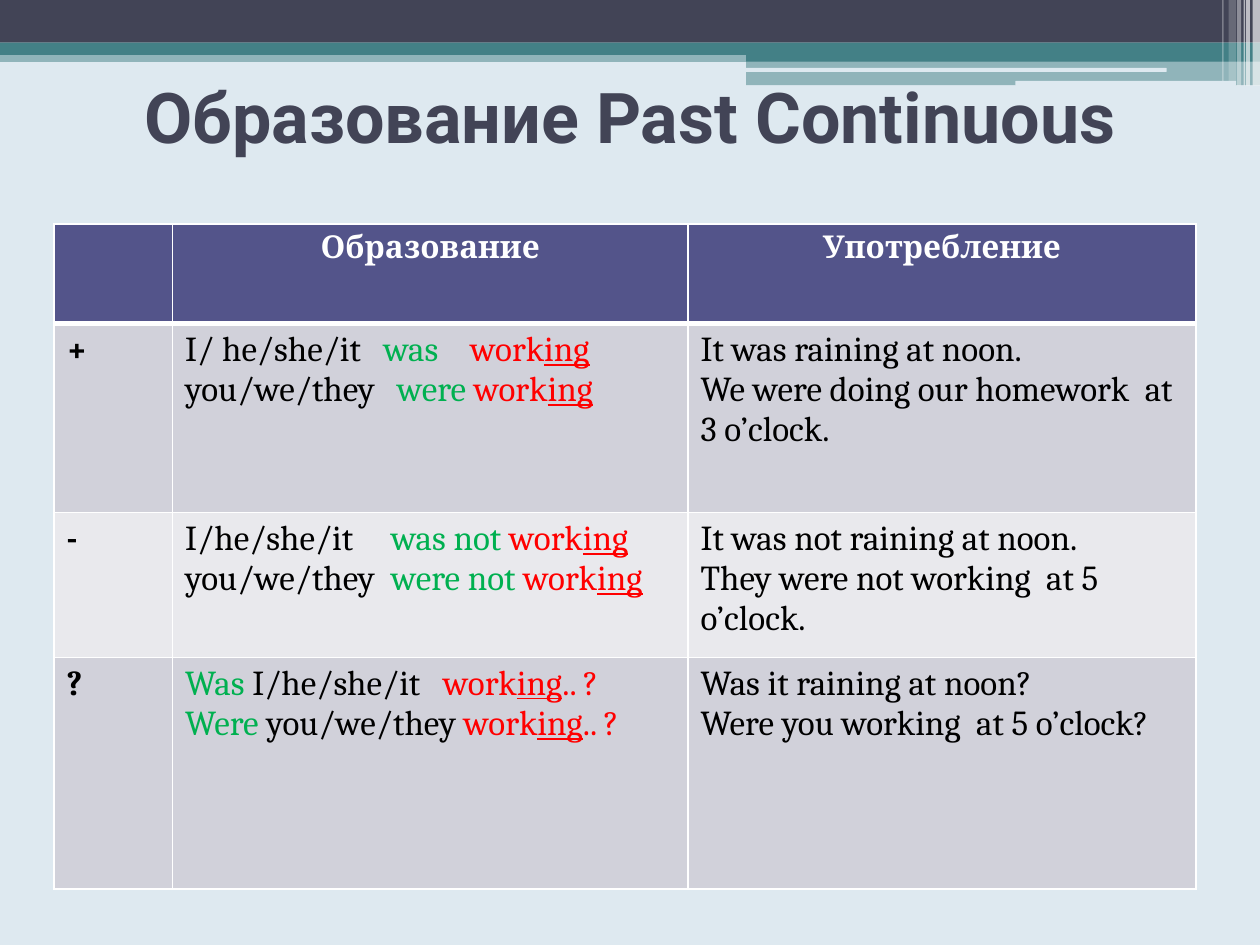
from lxml.etree import SubElement
from pptx import Presentation
from pptx.dml.color import RGBColor
from pptx.enum.shapes import MSO_SHAPE
from pptx.enum.text import MSO_ANCHOR, PP_ALIGN
from pptx.oxml import parse_xml
from pptx.oxml.ns import nsdecls, qn
from pptx.util import Cm, Pt

PALE = RGBColor(0xDE, 0xE9, 0xF0)
SLATE = RGBColor(0x42, 0x44, 0x56)
TEAL = RGBColor(0x43, 0x80, 0x86)
INDIGO = RGBColor(0x53, 0x54, 0x8A)
BAND_DARK = RGBColor(0xD1, 0xD1, 0xDA)
BAND_LIGHT = RGBColor(0xE9, 0xE9, 0xED)
WHITE = RGBColor(0xFF, 0xFF, 0xFF)
BLACK = RGBColor(0x00, 0x00, 0x00)
GREEN = RGBColor(0x00, 0xB0, 0x50)
RED = RGBColor(0xFF, 0x00, 0x00)


def add_text(paragraph, text, font="Cambria", size=20, color=BLACK, bold=False, underline=False):
    run = paragraph.add_run()
    run.text = text
    run.font.name = font
    run.font.size = Pt(size)
    run.font.color.rgb = color
    run.font.bold = bold
    run.font.underline = underline


presentation = Presentation()
presentation.slide_width = Cm(25.4)
presentation.slide_height = Cm(19.05)
slide = presentation.slides.add_slide(presentation.slide_layouts[6])
slide.background.fill.solid()
slide.background.fill.fore_color.rgb = PALE

RECT, ROUND = MSO_SHAPE.RECTANGLE, MSO_SHAPE.ROUNDED_RECTANGLE
bars = [
    (RECT, 0, 1.02, 25.4, 0.23, TEAL, 50),
    (RECT, 0, 0, 25.4, 0.86, SLATE, 100),
    (RECT, 0, 0.86, 25.4, 0.25, TEAL, 100),
    (RECT, 15.04, 0.99, 10.36, 0.25, TEAL, 100),
    (RECT, 15.04, 1.22, 10.36, 0.5, TEAL, 50),
    (ROUND, 15.01, 1.37, 8.51, 0.08, PALE, 100),
    (ROUND, 20.47, 1.63, 4.45, 0.1, PALE, 100),
    (RECT, 25.25, 0, 0.15, 1.73, WHITE, 65),
    (RECT, 25.12, 0, 0.08, 1.73, WHITE, 65),
    (RECT, 25.07, 0, 0.03, 1.73, WHITE, 60),
    (RECT, 24.94, 0, 0.08, 1.73, WHITE, 40),
    (RECT, 24.77, 0, 0.15, 1.63, WHITE, 20),
    (RECT, 24.64, 0, 0.03, 1.63, WHITE, 30),
]
for kind, left, top, width, height, color, opacity in bars:
    shape = slide.shapes.add_shape(kind, Cm(left), Cm(top), Cm(width), Cm(height))
    shape.shadow.inherit = False
    shape.line.fill.background()
    shape.fill.solid()
    shape.fill.fore_color.rgb = color
    if opacity < 100:
        fill_color = shape.element.spPr.find(".//" + qn("a:srgbClr"))
        SubElement(fill_color, qn("a:alpha"), val=str(opacity * 1000))

title = slide.shapes.add_textbox(Cm(1.27), Cm(0.53), Cm(22.86), Cm(3.61))
title.text_frame.word_wrap = True
title.text_frame.vertical_anchor = MSO_ANCHOR.MIDDLE
title_paragraph = title.text_frame.paragraphs[0]
title_paragraph.alignment = PP_ALIGN.CENTER
add_text(title_paragraph, "Образование Past Continuous", font="Roboto", size=40, color=SLATE, bold=True)

column_widths = [2.39, 10.39, 10.24]
row_heights = [2, 3.81, 2.92, 4.67]
table = slide.shapes.add_table(
    4, 3, Cm(1.09), Cm(4.52), Cm(sum(column_widths)), Cm(sum(row_heights))
).table
for column, width in zip(table.columns, column_widths):
    column.width = Cm(width)
for row, height in zip(table.rows, row_heights):
    row.height = Cm(height)

for row_index, fill_color in enumerate([INDIGO, BAND_DARK, BAND_LIGHT, BAND_DARK]):
    for cell in table.rows[row_index].cells:
        cell.fill.solid()
        cell.fill.fore_color.rgb = fill_color
        widths = {"L": 1, "R": 1, "T": 3 if row_index == 1 else 1, "B": 3 if row_index == 0 else 1}
        properties = cell._tc.get_or_add_tcPr()
        for position, (side, points) in enumerate(widths.items()):
            border = parse_xml(
                f'<a:ln{side} {nsdecls("a")} w="{Pt(points)}"><a:solidFill>'
                f'<a:srgbClr val="{WHITE}"/></a:solidFill></a:ln{side}>'
            )
            properties.insert(position, border)

for column_index, heading in enumerate(["Образование", "Употребление"], start=1):
    paragraph = table.cell(0, column_index).text_frame.paragraphs[0]
    paragraph.alignment = PP_ALIGN.CENTER
    add_text(paragraph, heading, size=18, color=WHITE, bold=True)

VERB = [("work", RED, False), ("ing", RED, True)]
QUESTION_VERB = VERB + [(".. ?", RED, False)]
content = [
    (
        "+",
        [
            ([4, 5.75], [("I/ he/she/it\t", BLACK, False), ("was\t", GREEN, False)] + VERB),
            ([4.27], [("you/we/they\t", BLACK, False), ("were ", GREEN, False)] + VERB),
        ],
        ["It was raining at noon.", "We were doing our homework  at 3 o’clock."],
    ),
    (
        "-",
        [
            ([4.15], [("I/he/she/it\t", BLACK, False), ("was not ", GREEN, False)] + VERB),
            ([4.15], [("you/we/they\t", BLACK, False), ("were not ", GREEN, False)] + VERB),
        ],
        ["It was not raining at noon.", "They were not working  at 5 o’clock."],
    ),
    (
        "?",
        [
            ([5.2], [("Was ", GREEN, False), ("I/he/she/it\t", BLACK, False)] + QUESTION_VERB),
            ([], [("Were ", GREEN, False), ("you/we/they ", BLACK, False)] + QUESTION_VERB),
        ],
        ["Was it raining at noon?", "Were you working  at 5 o’clock?"],
    ),
]
for row_index, (sign, formulas, examples) in enumerate(content, start=1):
    add_text(table.cell(row_index, 0).text_frame.paragraphs[0], sign, bold=True)
    formula_frame = table.cell(row_index, 1).text_frame
    example_frame = table.cell(row_index, 2).text_frame
    for frame in (formula_frame, example_frame):
        frame.add_paragraph()
    for paragraph, (tab_stops, runs) in zip(formula_frame.paragraphs, formulas):
        if tab_stops:
            tab_list = SubElement(paragraph._p.get_or_add_pPr(), qn("a:tabLst"))
            for stop in tab_stops:
                SubElement(tab_list, qn("a:tab"), pos=str(Cm(stop)), algn="l")
        for text, color, underline in runs:
            add_text(paragraph, text, color=color, underline=underline)
    for paragraph, example in zip(example_frame.paragraphs, examples):
        add_text(paragraph, example)

presentation.save("out.pptx")
